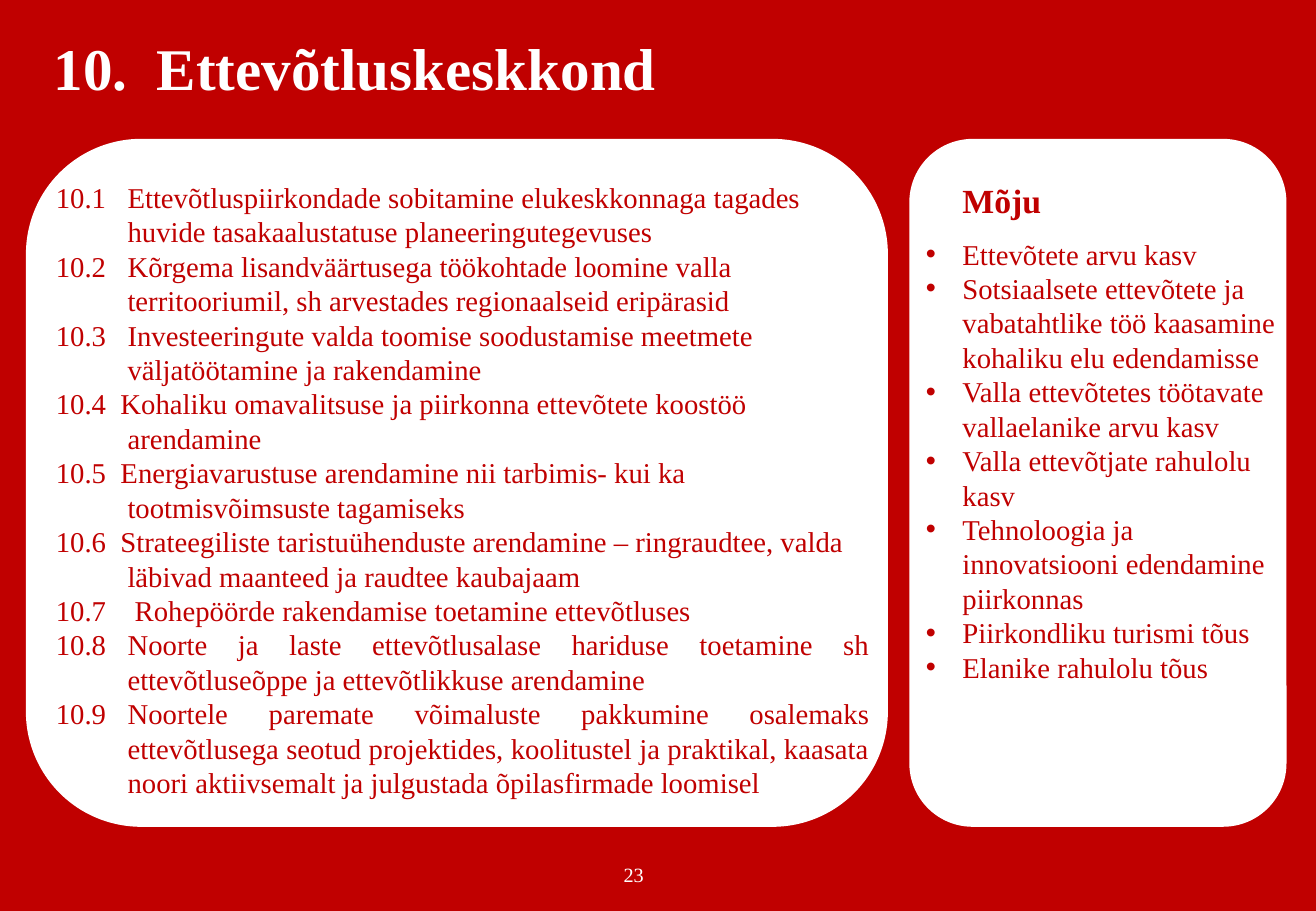
from pptx import Presentation
from pptx.dml.color import RGBColor
from pptx.enum.shapes import MSO_SHAPE
from pptx.enum.text import MSO_ANCHOR, PP_ALIGN
from pptx.oxml.ns import qn
from pptx.util import Inches, Pt
from lxml.etree import SubElement

RED = RGBColor(0xC0, 0x00, 0x00)
WHITE = RGBColor(0xFF, 0xFF, 0xFF)
FONT = "Times New Roman"
INSET = Inches(0.05)
PANEL_TOP, PANEL_HEIGHT = 1.15, 5.65
TEXT_TOP = 1.43

ACTIONS = [
    "10.1\tEttevõtluspiirkondade sobitamine elukeskkonnaga tagades huvide tasakaalustatuse planeeringutegevuses",
    "10.2\tKõrgema lisandväärtusega töökohtade loomine valla territooriumil, sh arvestades regionaalseid eripärasid",
    "10.3\tInvesteeringute valda toomise soodustamise meetmete väljatöötamine ja rakendamine",
    "10.4  Kohaliku omavalitsuse ja piirkonna ettevõtete koostöö arendamine",
    "10.5  Energiavarustuse arendamine nii tarbimis- kui ka tootmisvõimsuste tagamiseks",
    "10.6  Strateegiliste taristuühenduste arendamine – ringraudtee, valda läbivad maanteed ja raudtee kaubajaam",
    "10.7\t Rohepöörde rakendamise toetamine ettevõtluses",
    "10.8\tNoorte ja laste ettevõtlusalase hariduse toetamine sh ettevõtluseõppe ja ettevõtlikkuse arendamine",
    "10.9\tNoortele paremate võimaluste pakkumine osalemaks ettevõtlusega seotud projektides, "
    "koolitustel ja praktikal, kaasata noori aktiivsemalt ja julgustada õpilasfirmade loomisel",
]
JUSTIFIED = ("10.8", "10.9")
IMPACTS = [
    "Ettevõtete arvu kasv",
    "Sotsiaalsete ettevõtete ja vabatahtlike töö kaasamine kohaliku elu edendamisse",
    "Valla ettevõtetes töötavate vallaelanike arvu kasv",
    "Valla ettevõtjate rahulolu kasv",
    "Tehnoloogia ja innovatsiooni edendamine piirkonnas",
    "Piirkondliku turismi tõus",
    "Elanike rahulolu tõus",
]


def prepare_frame(shape, anchor, wrap=True):
    """Set the insets, anchor and wrapping, and return the text frame."""
    frame = shape.text_frame
    frame.margin_left = frame.margin_right = INSET
    frame.margin_top = frame.margin_bottom = INSET
    frame.vertical_anchor = anchor
    frame.word_wrap = wrap
    return frame


def write_paragraph(paragraph, text, size, color, bold=False, indent=None, hanging=0):
    paragraph.text = text
    paragraph.font.name = FONT
    paragraph.font.size = Pt(size)
    paragraph.font.bold = bold
    paragraph.font.color.rgb = color
    if indent is not None:
        properties = paragraph._p.get_or_add_pPr()
        properties.set("marL", str(Inches(indent)))
        properties.set("indent", str(-Inches(hanging)))
    return paragraph


presentation = Presentation()
presentation.slide_width = Inches(10.83)
presentation.slide_height = Inches(7.5)
slide = presentation.slides.add_slide(presentation.slide_layouts[5])
slide.background.fill.solid()
slide.background.fill.fore_color.rgb = RED

title = slide.shapes.title
title.left, title.top = Inches(0.39), Inches(0.29)
title.width, title.height = Inches(9.85), Inches(0.6)
frame = prepare_frame(title, MSO_ANCHOR.MIDDLE)
heading = write_paragraph(frame.paragraphs[0], "10.  Ettevõtluskeskkond", 35, WHITE, bold=True)
heading.alignment = PP_ALIGN.LEFT
heading.line_spacing = 0.9

for left, width in ((0.22, 7.08), (7.49, 3.09)):
    panel = slide.shapes.add_shape(
        MSO_SHAPE.ROUNDED_RECTANGLE,
        Inches(left), Inches(PANEL_TOP), Inches(width), Inches(PANEL_HEIGHT))
    panel.shadow.inherit = False
    panel.fill.solid()
    panel.fill.fore_color.rgb = WHITE
    panel.line.color.rgb = WHITE
    panel.line.width = Pt(1)

actions_box = slide.shapes.add_textbox(Inches(0.41), Inches(TEXT_TOP), Inches(6.8), Inches(5.2))
frame = prepare_frame(actions_box, MSO_ANCHOR.TOP)
for index, action in enumerate(ACTIONS):
    paragraph = frame.add_paragraph() if index else frame.paragraphs[0]
    write_paragraph(paragraph, action, 17, RED, indent=0.59, hanging=0.59)
    if action.startswith(JUSTIFIED):
        paragraph.alignment = PP_ALIGN.JUSTIFY

impacts_box = slide.shapes.add_textbox(Inches(7.48), Inches(TEXT_TOP), Inches(3.11), Inches(4.24))
frame = prepare_frame(impacts_box, MSO_ANCHOR.TOP)
heading = write_paragraph(frame.paragraphs[0], "Mõju", 20, RED, bold=True, indent=0.39)
heading.space_after = Pt(9.6)
for impact in IMPACTS:
    paragraph = write_paragraph(frame.add_paragraph(), impact, 17, RED, indent=0.39, hanging=0.3)
    properties = paragraph._p.get_or_add_pPr()
    bullet = properties.makeelement(qn("a:buChar"), {"char": "•"})
    properties.insert_element_before(bullet, "a:tabLst", "a:defRPr", "a:extLst")
    bullet_font = properties.makeelement(qn("a:buFont"), {"typeface": "Arial"})
    bullet.addprevious(bullet_font)

number_box = slide.shapes.add_textbox(Inches(5.08), Inches(7.05), Inches(0.27), Inches(0.3))
frame = prepare_frame(number_box, MSO_ANCHOR.MIDDLE, wrap=False)
number = write_paragraph(frame.paragraphs[0], "23", 12, WHITE)
number.alignment = PP_ALIGN.CENTER

presentation.save("out.pptx")
